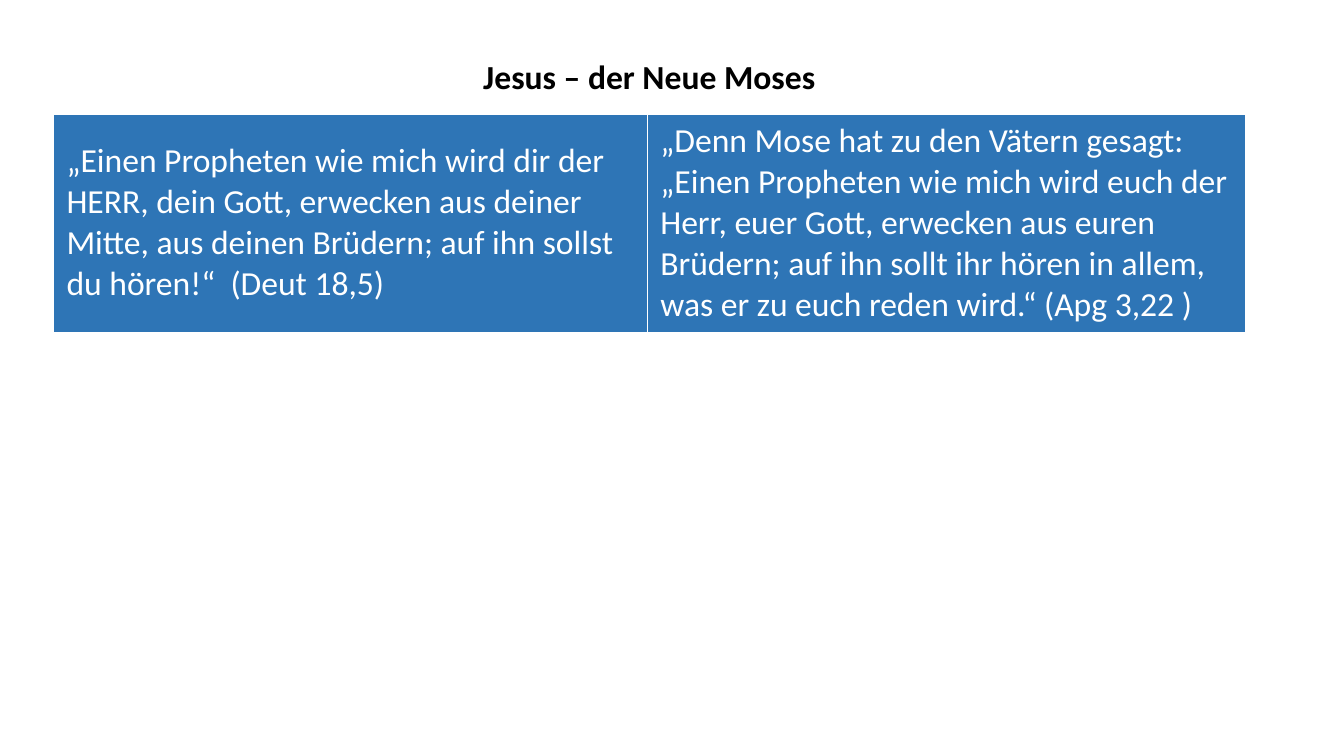
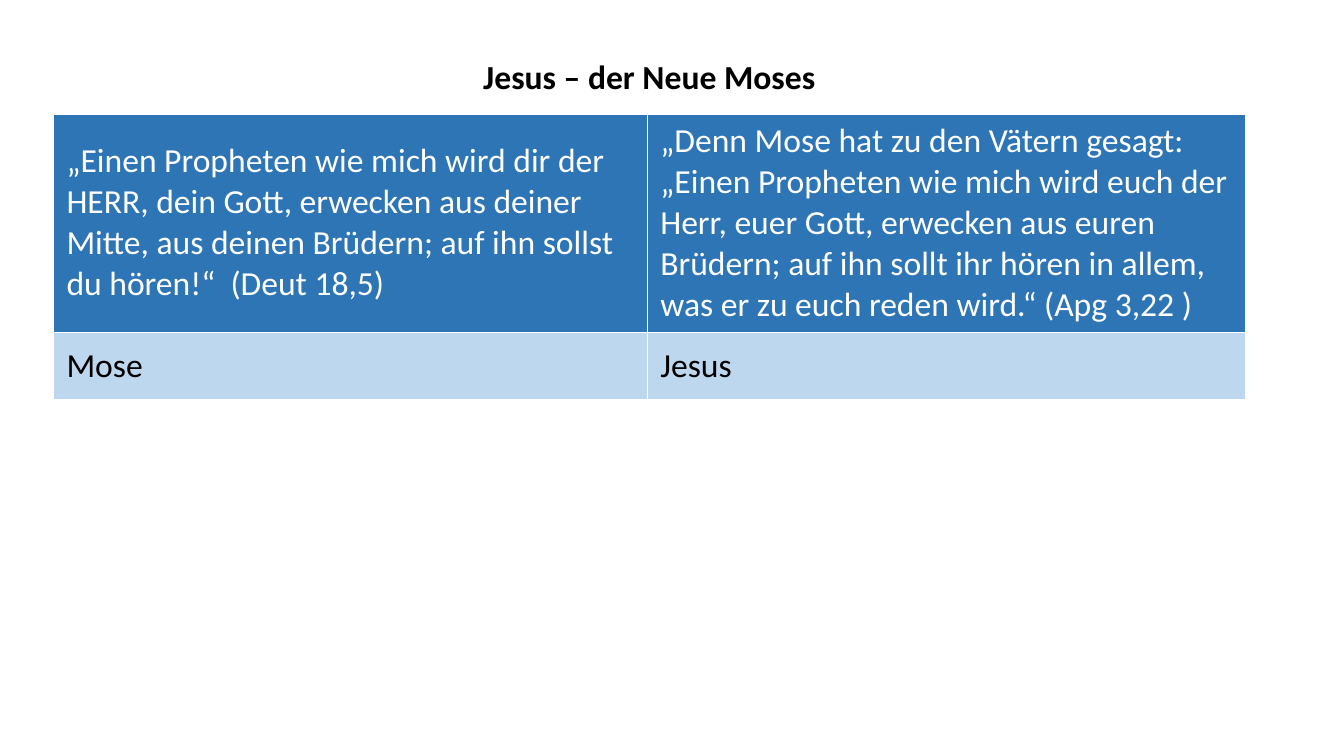
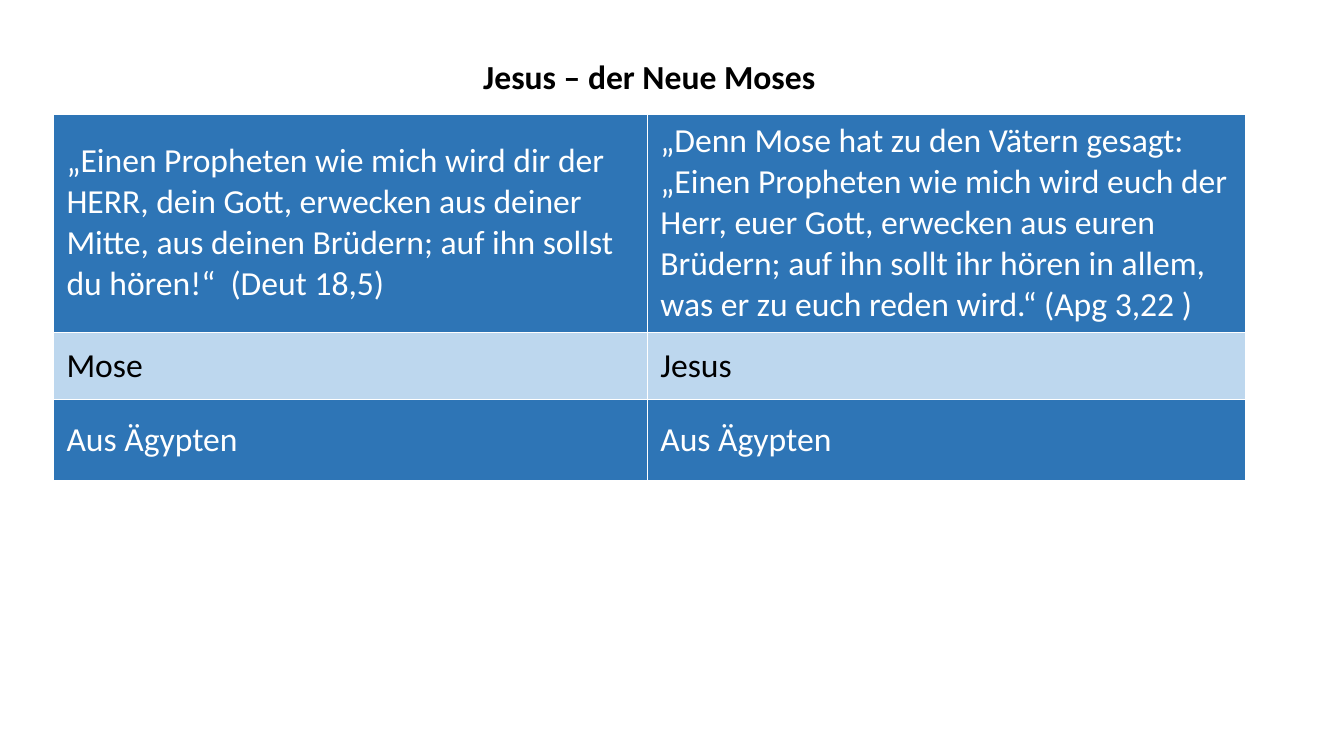
from lxml import etree
from pptx import Presentation
from pptx.dml.color import RGBColor
from pptx.enum.text import MSO_ANCHOR, PP_ALIGN
from pptx.oxml.ns import qn
from pptx.util import Inches, Pt

MIDDLE = MSO_ANCHOR.MIDDLE
CENTER, LEFT = PP_ALIGN.CENTER, PP_ALIGN.LEFT

COLORS = {"white": "FFFFFF", "black": "000000", "blue": "2E75B6", "pale": "BDD7EE"}
FONT, SIZE = "Calibri", Pt(24)
TABLE_LEFT, TABLE_TOP = 0.53, 0.43
COL_WIDTHS = [5.89, 5.93]
INSET = Inches(0.13)

ROWS = [
    (0.69, "white", "black", ["Jesus – der Neue Moses"]),
    (2.18, "blue", "white", [
        "„Einen Propheten wie mich wird dir der HERR, dein Gott, erwecken aus deiner "
        "Mitte, aus deinen Brüdern; auf ihn sollst du hören!“  (Deut 18,5)",
        "„Denn Mose hat zu den Vätern gesagt: „Einen Propheten wie mich wird euch der "
        "Herr, euer Gott, erwecken aus euren Brüdern; auf ihn sollt ihr hören in allem, "
        "was er zu euch reden wird.“ (Apg 3,22 )",
    ]),
    (0.66, "pale", "black", ["Mose", "Jesus"]),
    (0.81, "blue", "white", ["Aus Ägypten", "Aus Ägypten"]),
]


def add_borders(cell, bottom):
    tcPr = cell._tc.get_or_add_tcPr()
    for side, width in (("L", 1), ("R", 1), ("T", 1), ("B", bottom)):
        ln = etree.SubElement(tcPr, qn(f"a:ln{side}"), w=str(Pt(width)))
        fill = etree.SubElement(ln, qn("a:solidFill"))
        etree.SubElement(fill, qn("a:srgbClr"), val=COLORS["white"])


prs = Presentation()
prs.slide_width, prs.slide_height = Inches(13.33), Inches(7.5)

for n_rows in (2, 3, 4):
    slide = prs.slides.add_slide(prs.slide_layouts[6])
    rows = ROWS[:n_rows]
    table = slide.shapes.add_table(
        n_rows, len(COL_WIDTHS), Inches(TABLE_LEFT), Inches(TABLE_TOP),
        Inches(sum(COL_WIDTHS)), Inches(sum(row[0] for row in rows))).table
    table.first_row = table.horz_banding = False
    for column, width in zip(table.columns, COL_WIDTHS):
        column.width = Inches(width)
    table.cell(0, 0).merge(table.cell(0, 1))

    for i, (height, fill, color, texts) in enumerate(rows):
        is_title = i == 0
        table.rows[i].height = Inches(height)
        for cell in table.rows[i].cells:
            add_borders(cell, 3 if is_title else 1)
            cell.fill.solid()
            cell.fill.fore_color.rgb = RGBColor.from_string(COLORS[fill])
            cell.vertical_anchor = MIDDLE
            cell.margin_left = cell.margin_right = INSET
            cell.margin_top = cell.margin_bottom = 0
        for j, text in enumerate(texts):
            p = table.cell(i, j).text_frame.paragraphs[0]
            p.alignment = CENTER if is_title else LEFT
            r = p.add_run()
            r.text = text
            r.font.name, r.font.size, r.font.bold = FONT, SIZE, is_title
            r.font.color.rgb = RGBColor.from_string(COLORS[color])

prs.save("out.pptx")
